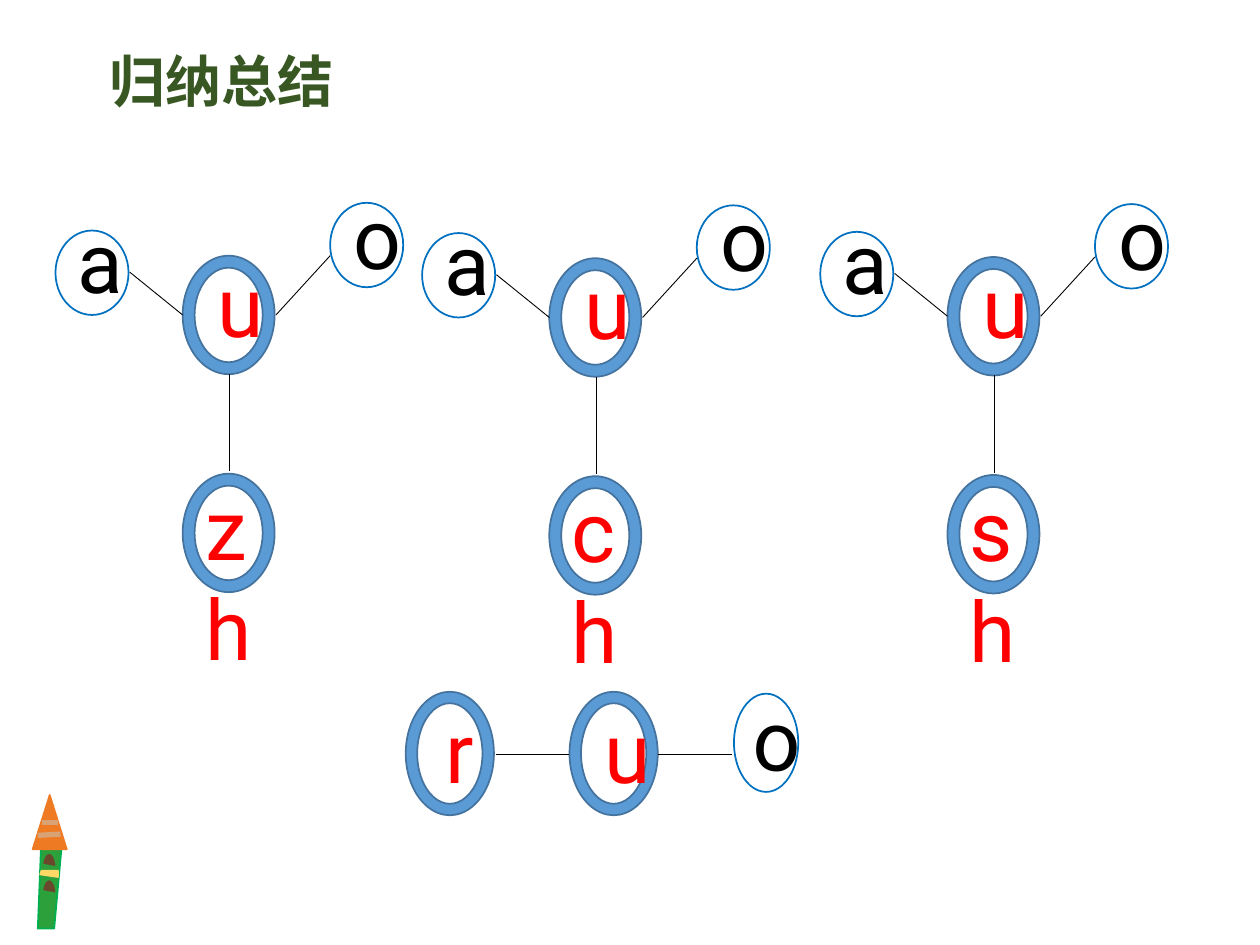
from lxml.etree import SubElement
from pptx import Presentation
from pptx.dml.color import RGBColor
from pptx.enum.shapes import MSO_CONNECTOR, MSO_SHAPE
from pptx.enum.text import MSO_ANCHOR, MSO_AUTO_SIZE, PP_ALIGN
from pptx.oxml.ns import qn
from pptx.util import Inches, Pt

color = RGBColor.from_string
RED, BLACK = "FF0000", "000000"


def style_shape(sp, fill, line, rotation=0, adjustments=()):
    sp.shadow.inherit = False
    sp.fill.solid()
    sp.fill.fore_color.rgb = color(fill)
    sp.line.color.rgb = color(line)
    sp.line.width = Pt(1)
    sp.rotation = rotation
    for i, value in enumerate(adjustments):
        sp.adjustments[i] = value


def add_line(group, x1, y1, x2, y2, line=BLACK, width=0.5):
    cx = group.shapes.add_connector(
        MSO_CONNECTOR.STRAIGHT, Inches(x1), Inches(y1), Inches(x2), Inches(y2))
    cx.line.color.rgb = color(line)
    cx.line.width = Pt(width)
    SubElement(cx._element.spPr, qn("a:effectLst"))


prs = Presentation()
prs.slide_width, prs.slide_height = Inches(10), Inches(7.5)
s = prs.slides.add_slide(prs.slide_layouts[5])

title = s.shapes.title
title.left, title.top = Inches(0.76), Inches(0.32)
title.width, title.height = Inches(2), Inches(0.64)
tf = title.text_frame
tf.word_wrap = False
tf.auto_size = MSO_AUTO_SIZE.SHAPE_TO_FIT_TEXT
tf.vertical_anchor = MSO_ANCHOR.TOP
p = tf.paragraphs[0]
p.alignment = PP_ALIGN.CENTER
r = p.add_run()
r.text = "归纳总结"
r.font.size = Pt(32)
r.font.bold = True
r.font.color.rgb = color("385723")
r.font.name = "Noto Sans CJK SC"
SubElement(r._r.rPr, qn("a:ea"), typeface="Noto Sans CJK SC")

pencil = s.shapes.add_group_shape()
barrel = [(0.33, 6.61), (0.49, 6.71), (0.43, 7.37), (0.3, 7.37)]
band = [(0.33, 6.91), (0.46, 6.91), (0.46, 6.96), (0.32, 6.94)]
for points, fill, line in [(barrel, "2CA03B", "00B050"), (band, "FFD966", "FFD966")]:
    points = [(Inches(x), Inches(y)) for x, y in points]
    fb = pencil.shapes.build_freeform(*points[0], scale=1.0)
    fb.add_line_segments(points[1:], close=True)
    style_shape(fb.convert_to_shape(), fill, line)
tip = pencil.shapes.add_shape(
    MSO_SHAPE.ISOSCELES_TRIANGLE, Inches(0.26), Inches(6.31), Inches(0.27), Inches(0.43))
style_shape(tip, "EE7A24", "EE7A24")
for y in (6.87, 7.08):
    spot = pencil.shapes.add_shape(
        MSO_SHAPE.CHORD, Inches(0.26), Inches(y), Inches(0.26), Inches(0.09))
    style_shape(spot, "69482C", "69482C", 90, (89.452, 132.133))
add_line(pencil, 0.33, 6.53, 0.46, 6.53, "D9A275", 3)
add_line(pencil, 0.3, 6.63, 0.48, 6.62, "D9A275", 3)

diagrams = []
for dx, dy, initial in [(0, 0, "zh"), (2.91, 0.02, "ch"), (6.07, 0.01, "sh")]:
    diagrams.append({
        "rotation": 0,
        "rings": [(1.45 + dx, y + dy, 0.73, 0.94) for y in (2.03, 3.76)],
        "circles": [(x + dx, y + dy, 0.58, 0.67) for x, y in [(0.44, 1.83), (2.62, 1.61)]],
        "links": [(x1 + dx, y1 + dy, x2 + dx, y2 + dy) for x1, y1, x2, y2 in [
            (1.03, 2.16, 1.45, 2.5), (2.19, 2.5, 2.62, 2.03), (1.82, 2.97, 1.82, 3.74)]],
        "letters": [(text, x + dx, y + dy, w, h, c, 0) for text, x, y, w, h, c in [
            ("a", 0.52, 1.61, 0.45, 0.91, BLACK), ("u", 1.63, 1.96, 0.45, 0.91, RED),
            ("o", 2.71, 1.42, 0.45, 0.91, BLACK), (initial, 1.53, 3.73, 0.73, 1.72, RED)]],
    })
diagrams.append({
    "rotation": 90,
    "rings": [(x, 5.63, 0.98, 0.7) for x in (3.08, 4.38)],
    "circles": [(5.69, 5.64, 0.78, 0.51)],
    "links": [(5.81, 5.99, 5.22, 5.99), (4.52, 5.99, 3.94, 5.99)],
    "letters": [("r", 3.44, 5.5, 0.4, 0.91, RED, 0), ("u", 4.7, 5.5, 0.7, 0.91, RED, 0),
                ("o", 5.88, 5.41, 0.63, 0.91, BLACK, 3.8)],
})

for diagram in diagrams:
    group = s.shapes.add_group_shape()
    for box in diagram["rings"]:
        sp = group.shapes.add_shape(MSO_SHAPE.DONUT, *map(Inches, box))
        style_shape(sp, "5B9BD5", "43739E", diagram["rotation"], (0.13,))
    for box in diagram["circles"]:
        sp = group.shapes.add_shape(MSO_SHAPE.FLOWCHART_CONNECTOR, *map(Inches, box))
        style_shape(sp, "FFFFFF", "0070C0", diagram["rotation"])
    for link in diagram["links"]:
        add_line(group, *link)
    for text, x, y, w, h, c, rotation in diagram["letters"]:
        tb = group.shapes.add_textbox(Inches(x), Inches(y), Inches(w), Inches(h))
        tb.rotation = rotation
        tf = tb.text_frame
        tf.word_wrap = True
        tf.auto_size = MSO_AUTO_SIZE.SHAPE_TO_FIT_TEXT
        r = tf.paragraphs[0].add_run()
        r.text = text
        r.font.size = Pt(48)
        r.font.name = "Roboto"
        r.font.color.rgb = color(c)

prs.save("out.pptx")
